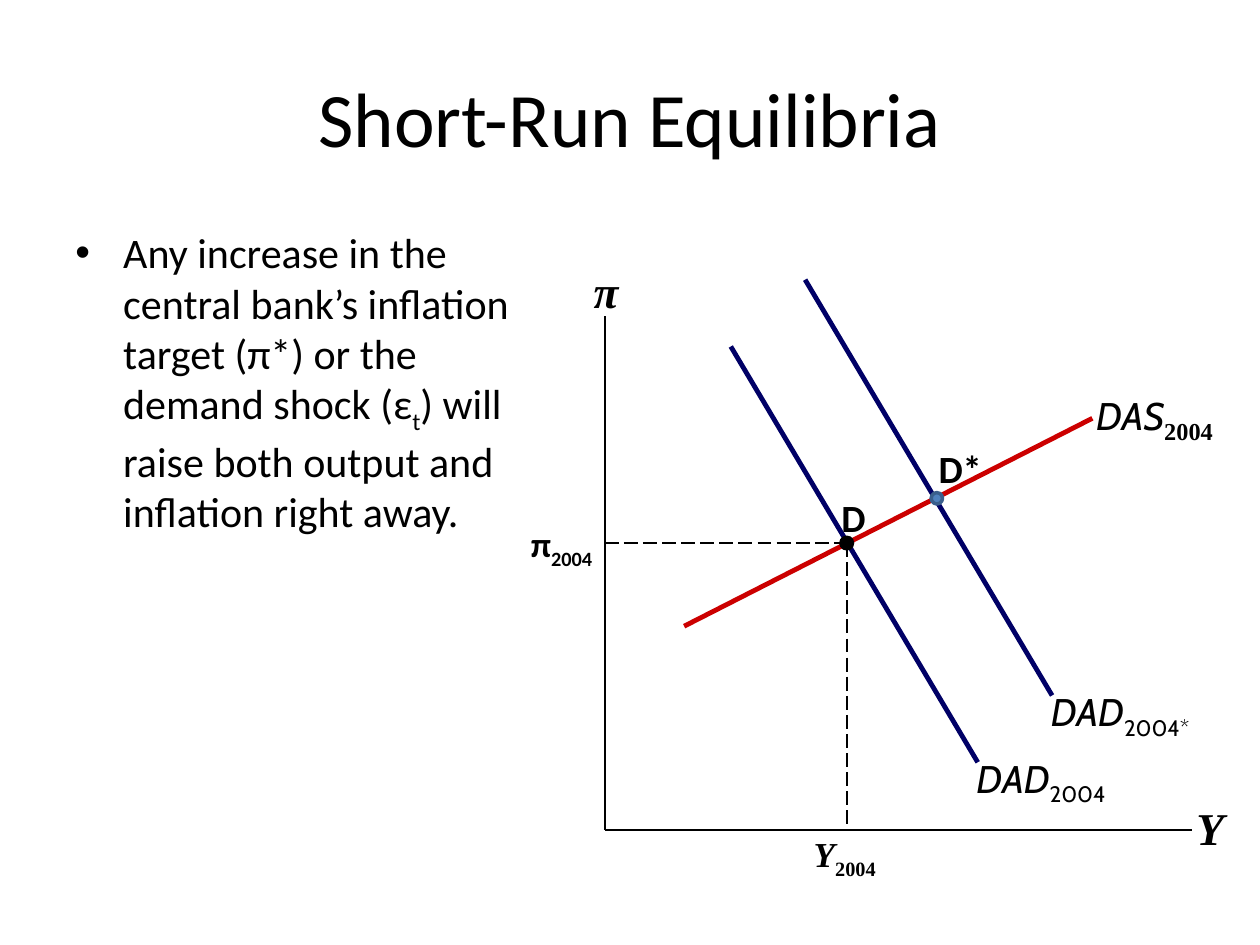
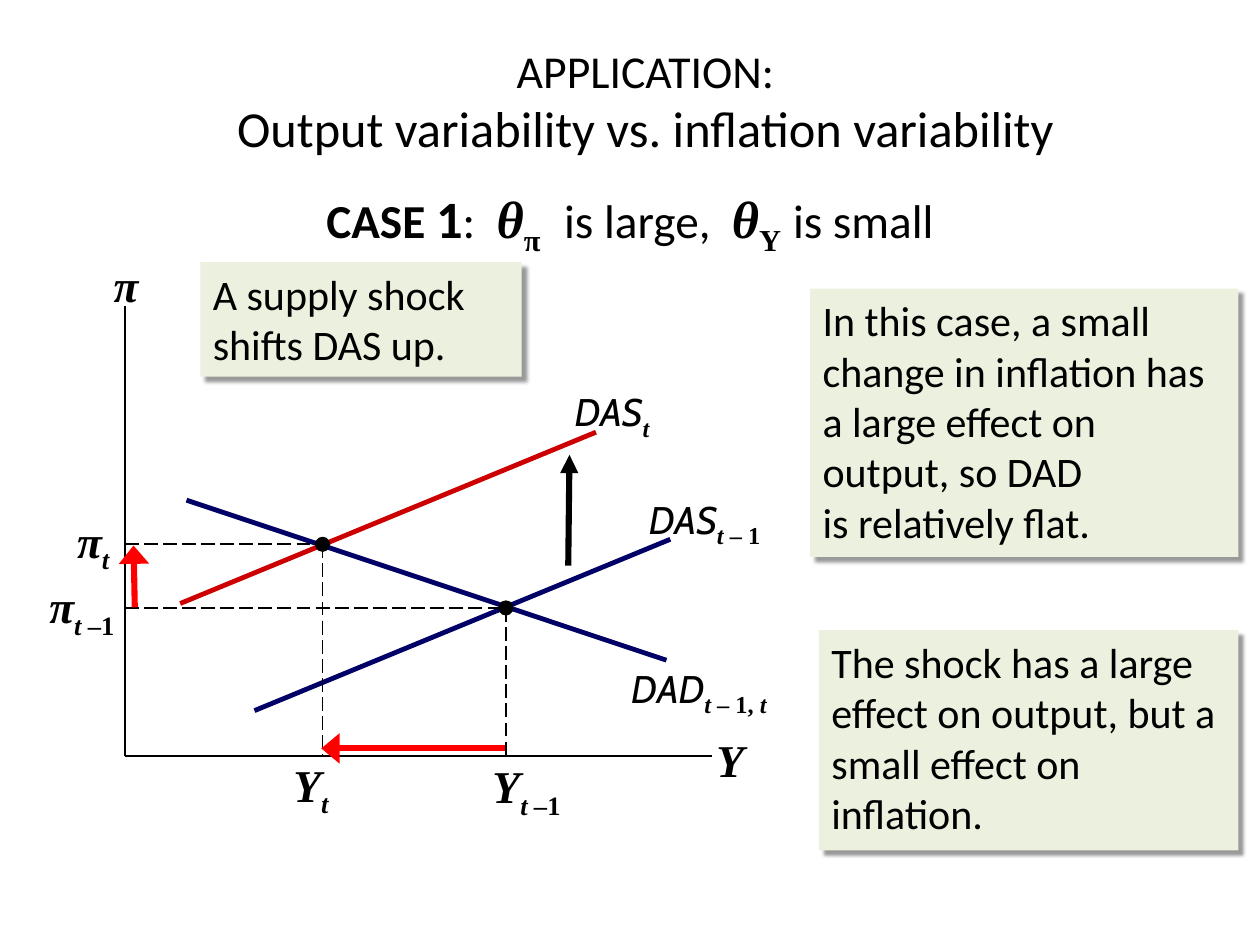
from collections import namedtuple

from lxml import etree
from pptx import Presentation
from pptx.dml.color import RGBColor
from pptx.enum.dml import MSO_LINE
from pptx.enum.shapes import MSO_CONNECTOR, MSO_SHAPE
from pptx.enum.text import MSO_ANCHOR, PP_ALIGN
from pptx.oxml.ns import qn
from pptx.util import Inches, Pt

STRAIGHT = MSO_CONNECTOR.STRAIGHT
OVAL, RECTANGLE = MSO_SHAPE.OVAL, MSO_SHAPE.RECTANGLE
LONG_DASH = MSO_LINE.LONG_DASH
LEFT, CENTER, RIGHT = PP_ALIGN.LEFT, PP_ALIGN.CENTER, PP_ALIGN.RIGHT
TOP, MIDDLE = MSO_ANCHOR.TOP, MSO_ANCHOR.MIDDLE

COLUMNS, ROWS, CELL = 100, 75, 0.1
BLANK_LAYOUT = 6
BLACK, NAVY, RED, ARROW_RED = "000000", "000066", "CC0000", "FF0000"
BLUE, DARK_BLUE, PALE_GREEN = "4F81BD", "3A5F8C", "EBF1DE"
THIN, CURVE, THICK = 1, 2.75, 3.5
LABEL_ROWS = 4.7
PADDED, FLUSH = (0.1, 0.05), (0, 0)

Box = namedtuple("Box", "left top width height")

BODY = {"name": "Calibri", "size": 24}
SERIF = {"name": "Times New Roman", "bold": True}
SUB = {"baseline": -25}
AXIS = SERIF | {"size": 26, "italic": True}
AXIS_SUB = AXIS | SUB
AXIS_SUB_UPRIGHT = AXIS_SUB | {"italic": False}
TICK = AXIS | {"size": 20}
CURVE_NAME = {"name": "Cabin", "size": 22, "italic": True}
CURVE_YEAR = CURVE_NAME | SUB | {"italic": False}
CURVE_SUB_UPRIGHT = SERIF | SUB | {"size": 24}
CURVE_SUB = CURVE_SUB_UPRIGHT | {"italic": True}
POINT_NAME = {"name": "Calibri", "size": 22, "bold": True}
TICK_PLAIN = POINT_NAME | {"size": 20}
CASE = {"name": "Calibri", "size": 27}
CASE_BOLD = CASE | {"bold": True}
THETA = AXIS | {"size": 30}
THETA_SUB = THETA | SUB | {"italic": False}


def color(text):
    """Turn a hex string into a colour."""
    return RGBColor.from_string(text)


def grid(*cells):
    """Turn grid cells into lengths."""
    return [Inches(cell * CELL) for cell in cells]


def inside(box, left, top, width, height):
    """Give the box that lies at an offset within another box."""
    return Box(box.left + left, box.top + top, width, height)


def style(font, formats):
    """Apply a dict of format values to a font."""
    font.color.rgb = color(BLACK)
    for key, value in formats.items():
        if key == "baseline":
            font._element.set(key, str(value * 1000))
        else:
            setattr(font, key, Pt(value) if key == "size" else value)


def write(frame, spans, align=LEFT, anchor=TOP, padding=PADDED):
    """Write styled spans as one paragraph and return it."""
    side, edge = (Inches(length) for length in padding)
    formats = {"word_wrap": True, "vertical_anchor": anchor,
               "margin_left": side, "margin_right": side,
               "margin_top": edge, "margin_bottom": edge}
    for key, value in formats.items():
        setattr(frame, key, value)
    para = frame.paragraphs[0]
    para.alignment = align
    for text, formats in spans:
        for index, piece in enumerate(text.split("\n")):
            if index:
                para.add_line_break()
            if piece:
                span = para.add_run()
                span.text = piece
                style(span.font, formats)
    return para


def add_text(page, box, spans, **layout):
    """Add a text box and return its paragraph."""
    return write(page.shapes.add_textbox(*grid(*box)).text_frame, spans, **layout)


def add_bullet(para, indent):
    """Give a paragraph a hanging round bullet."""
    props = para._p.get_or_add_pPr()
    props.set("marL", str(Inches(indent)))
    props.set("indent", str(-Inches(indent)))
    etree.SubElement(props, qn("a:buFont"), typeface="Arial")
    etree.SubElement(props, qn("a:buChar"), char="•")


def add_line(page, plot, start, end, ink=BLACK, weight=THIN, dash=None, head=None):
    """Draw a line between two points of a plot, with an optional arrowhead width."""
    ends = [plot.left + start[0], plot.top + start[1],
            plot.left + end[0], plot.top + end[1]]
    line = page.shapes.add_connector(STRAIGHT, *grid(*ends))
    line.line.color.rgb = color(ink)
    line.line.width = Pt(weight)
    if dash:
        line.line.dash_style = dash
    if head:
        etree.SubElement(line.line._get_or_add_ln(), qn("a:tailEnd"),
                         type="triangle", w=head, len="med")
    etree.SubElement(line._element.spPr, qn("a:effectLst"))


def add_shape(page, box, kind, fill, outline=None):
    """Add a plain filled shape."""
    shape = page.shapes.add_shape(kind, *grid(*box))
    shape.shadow.inherit = False
    shape.fill.solid()
    shape.fill.fore_color.rgb = color(fill)
    if outline:
        shape.line.color.rgb = color(outline)
        shape.line.width = Pt(2)
    else:
        shape.line.fill.background()
    return shape


def add_label(page, plot, at, width, spans, **layout):
    """Put a one-line label at a point of a plot."""
    add_text(page, inside(plot, *at, width, LABEL_ROWS), spans, **layout)


def add_dot(page, plot, center, radius=0.6, fill=BLACK, outline=None):
    """Mark a point of a plot."""
    x, y = center
    box = inside(plot, x - radius, y - radius, 2 * radius, 2 * radius)
    add_shape(page, box, OVAL, fill, outline)


def add_axes(page, plot, output_rise, inflation_rise):
    """Draw the two axes with their names."""
    corner = (0, plot.height)
    add_line(page, plot, (0, 0), corner)
    add_line(page, plot, corner, (plot.width, plot.height))
    add_label(page, plot, (plot.width + 0.35, plot.height - output_rise), 4.5,
              [("Y", AXIS)], padding=FLUSH)
    add_label(page, plot, (-2.8, -inflation_rise), 5.8, [("π", AXIS)], align=CENTER)


def add_curve(page, plot, start, end, ink, offset, width, spans):
    """Draw a curve with its name at an offset from its end."""
    add_line(page, plot, start, end, ink, CURVE)
    at = (end[0] + offset[0], end[1] + offset[1])
    add_label(page, plot, at, width, spans, padding=FLUSH)


def add_equilibrium(page, plot, point):
    """Mark an equilibrium and drop dashed guides to both axes."""
    x, y = point
    add_line(page, plot, (0, y), point, dash=LONG_DASH)
    add_line(page, plot, point, (x, plot.height), dash=LONG_DASH)
    add_dot(page, plot, point)


def add_note(page, box, text):
    """Add a pale note with a soft drop shadow."""
    note = add_shape(page, box, RECTANGLE, PALE_GREEN)
    effects = note._element.spPr.find(qn("a:effectLst"))
    shadow = etree.SubElement(effects, qn("a:outerShdw"), blurRad=str(Pt(2)),
                              dist=str(Pt(4)), dir=str(45 * 60000),
                              algn="tl", rotWithShape="0")
    ink = etree.SubElement(shadow, qn("a:srgbClr"), val=BLACK)
    etree.SubElement(ink, qn("a:alpha"), val="40000")
    write(note.text_frame, [(text, BODY)])


def add_title(page, box, lines):
    """Add a centred title from pairs of text and size."""
    spans = [(text, BODY | {"size": size}) for text, size in lines]
    add_text(page, box, spans, align=CENTER, anchor=MIDDLE)


def draw_demand_plot(page, plot):
    """Plot two demand curves against one supply curve."""
    add_axes(page, plot, 2.4, 4.7)
    for shift, year in enumerate(("2004", "2004*")):
        dx, dy = 5.9 * shift, -5.3 * shift
        add_curve(page, plot, (10 + dx, 2.4 + dy), (29.6 + dx, 35.4 + dy), NAVY,
                  (-0.1, -0.6), 15, [("DAD", CURVE_NAME), (year, CURVE_YEAR)])
    add_curve(page, plot, (6.3, 24.6), (38.7, 8.1), RED, (0.3, -2.4), 10.4,
              [("DAS", CURVE_NAME), ("2004", CURVE_SUB_UPRIGHT)])
    add_equilibrium(page, plot, (19.2, 18))
    add_dot(page, plot, (26.35, 14.45), 0.45, BLUE, DARK_BLUE)
    add_label(page, plot, (17.8, 13.6), 4.1, [("D", POINT_NAME)])
    add_label(page, plot, (25.5, 9.7), 6.5, [("D*", POINT_NAME)])
    add_label(page, plot, (15.6, 40.5), 8.3,
              [("Y", TICK), ("2004", TICK | SUB | {"italic": False})])
    add_label(page, plot, (-7.7, 15.9), 7.7,
              [("π", TICK_PLAIN), ("2004", TICK_PLAIN | SUB)], align=RIGHT)


def draw_supply_plot(page, plot):
    """Plot a supply shock along a flat demand curve."""
    add_axes(page, plot, 1.9, 4.4)
    now, before = [("t", CURVE_SUB)], [("t", CURVE_SUB), (" – 1", CURVE_SUB_UPRIGHT)]
    both = [("t", CURVE_SUB), (" – 1, ", CURVE_SUB_UPRIGHT), ("t", CURVE_SUB)]
    add_curve(page, plot, (4.9, 15.4), (43, 28.1), NAVY, (-2.8, 0.1), 13.3,
              [("DAD", CURVE_NAME)] + both)
    supplies = ((now, RED, 7.9), (before, NAVY, 10.5))
    for shift, (period, ink, width) in enumerate(supplies):
        dx, dy = 5.9 * shift, 8.5 * shift
        add_curve(page, plot, (4.4 + dx, 23.6 + dy), (37.4 + dx, 10 + dy), ink,
                  (-1.7, -3.75), width, [("DAS", CURVE_NAME)] + period)
    past = [("t –", AXIS_SUB), ("1", AXIS_SUB_UPRIGHT)]
    present = [("t", AXIS_SUB)]
    equilibria = (
        ((30.25, 23.95), past, (28.2, 35.4), 8.5, (-7.4, 21.1), 8),
        ((15.7, 18.9), present, (12.4, 35.3), 5.5, (-5.2, 15.9), 5.4),
    )
    for point, period, output_at, output_width, rate_at, rate_width in equilibria:
        add_equilibrium(page, plot, point)
        add_label(page, plot, output_at, output_width, [("Y", AXIS)] + period)
        add_label(page, plot, rate_at, rate_width, [("π", AXIS)] + period, align=CENTER)
    arrows = (
        ((35.2, 20.6), (35.3, 11.8), BLACK, "med"),
        ((0.8, 23.9), (0.7, 19), ARROW_RED, "lg"),
        ((30.2, 35.1), (15.6, 35.1), ARROW_RED, "lg"),
    )
    for start, end, ink, head in arrows:
        add_line(page, plot, start, end, ink, THICK, head=head)


def build_equilibria(page):
    """Build the slide on short-run equilibria."""
    add_title(page, Box(5, 3, 90, 12.5), [("Short-Run Equilibria", 44)])
    para = add_text(page, Box(5, 17.5, 37.3, 49.5), [
        ("Any increase in the central bank’s inflation target (π*) "
         "or the demand shock (ε", BODY),
        ("t", BODY | SUB),
        (") will raise both output and inflation right away.", BODY)])
    add_bullet(para, 0.38)
    draw_demand_plot(page, Box(48, 25.1, 46.6, 40.8))


def build_variability(page):
    """Build the slide on output and inflation variability."""
    add_title(page, Box(5.1, 2.8, 92.3, 10.3),
              [("APPLICATION:\n", 26.1),
               ("Output variability vs. inflation variability", 28.8)])
    add_text(page, Box(0, 14.3, 100, 6.6), [
        ("CASE ", CASE_BOLD), ("1", CASE_BOLD | {"size": 30}), (":  ", CASE),
        ("θ", THETA), ("π", THETA_SUB), ("  ", SERIF | {"size": 27, "bold": False}),
        ("is large,  ", CASE), ("θ", THETA), ("Y", THETA_SUB),
        (" ", SERIF | {"size": 27, "bold": False}), ("is small", CASE)], align=CENTER)
    draw_supply_plot(page, Box(9.9, 24.3, 46.6, 35.7))
    add_note(page, Box(15.9, 20.8, 25.5, 9.1), "A supply shock shifts DAS up.")
    add_note(page, Box(64.3, 22.9, 34, 21.3),
             "In this case, a small change in inflation has a large effect "
             "on output, so DAD \nis relatively flat.")
    add_note(page, Box(65, 50, 33.3, 17.5),
             "The shock has a large effect on output, but a small effect on inflation.")


def main():
    """Build and save the deck."""
    deck = Presentation()
    deck.slide_width, deck.slide_height = grid(COLUMNS, ROWS)
    for build in (build_equilibria, build_variability):
        build(deck.slides.add_slide(deck.slide_layouts[BLANK_LAYOUT]))
    deck.save("out.pptx")


if __name__ == "__main__":
    main()
